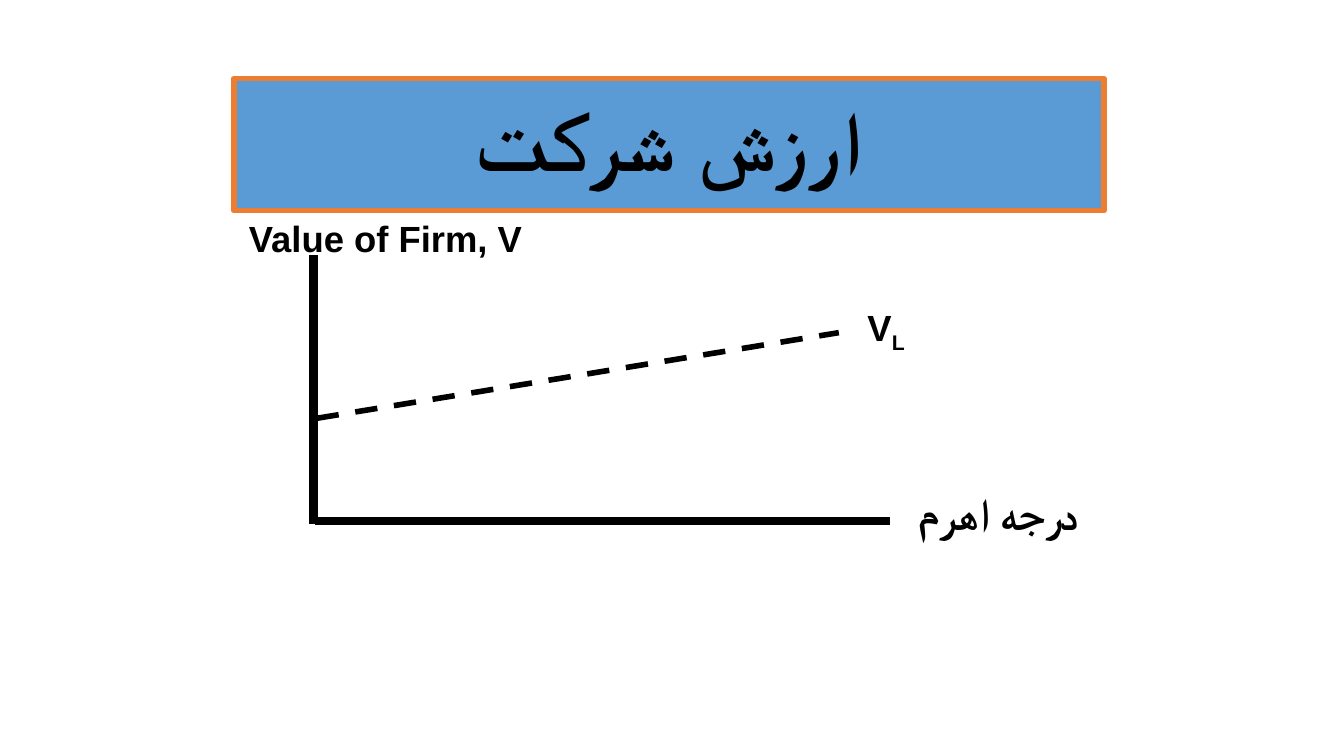
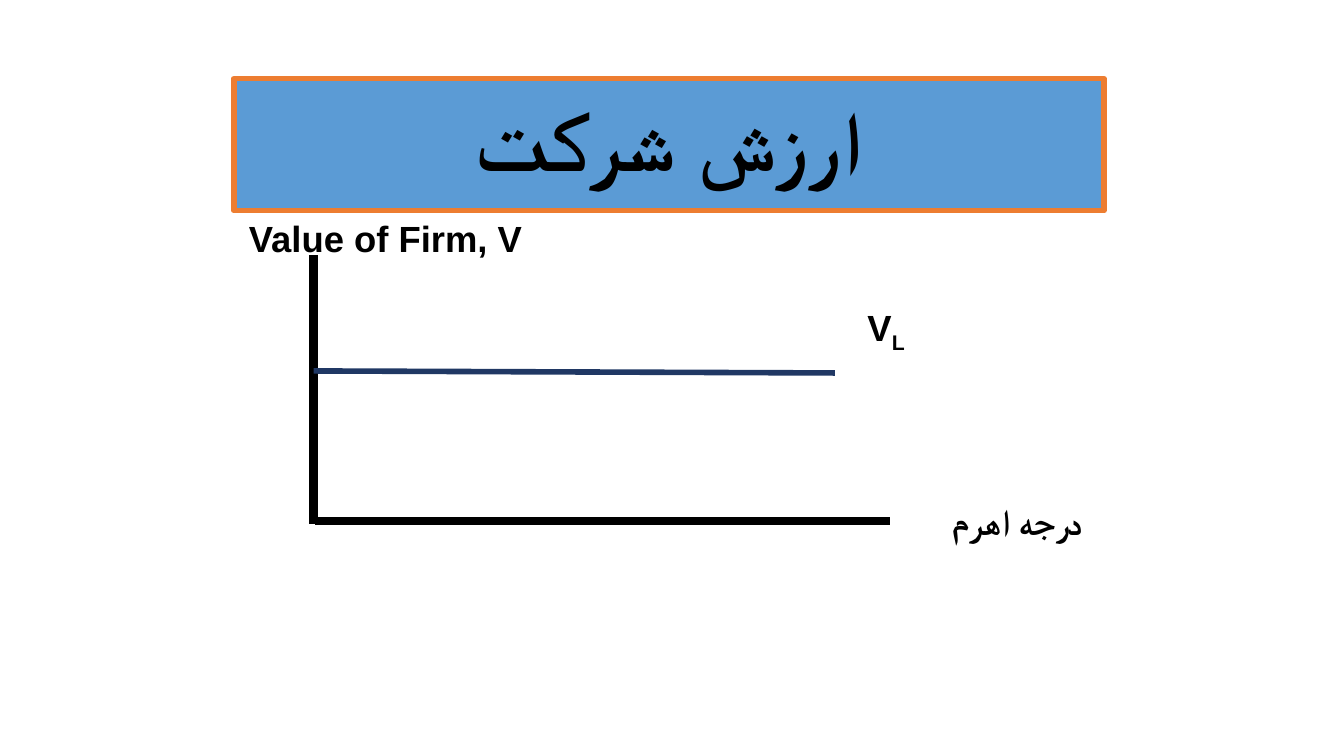
from dataclasses import dataclass

from lxml import etree
from pptx import Presentation
from pptx.dml.color import RGBColor
from pptx.enum.dml import MSO_LINE
from pptx.enum.shapes import MSO_CONNECTOR
from pptx.enum.text import MSO_ANCHOR, MSO_AUTO_SIZE, PP_ALIGN
from pptx.oxml.ns import qn
from pptx.util import Pt

PX = 9144  # 100 px to the inch
STRAIGHT = MSO_CONNECTOR.STRAIGHT
DASH = MSO_LINE.DASH
CENTER, RIGHT = PP_ALIGN.CENTER, PP_ALIGN.RIGHT
MIDDLE = MSO_ANCHOR.MIDDLE
FIXED, GROW = MSO_AUTO_SIZE.NONE, MSO_AUTO_SIZE.SHAPE_TO_FIT_TEXT
TITLE_ONLY = 5


@dataclass(frozen=True)
class Theme:
    ink: RGBColor = RGBColor(0x00, 0x00, 0x00)
    band: RGBColor = RGBColor(0x5B, 0x9B, 0xD5)
    band_edge: RGBColor = RGBColor(0xED, 0x7D, 0x31)
    navy: RGBColor = RGBColor(0x20, 0x38, 0x64)
    font: str = "Arial"
    title_size: int = 60
    large_size: int = 32
    label_size: int = 26
    axis_width: int = 6
    line_width: int = 4


THEME = Theme()
TITLE_BOX = (232, 78, 863, 131)
GRAPH_BOX = (311, 253, 572, 267)


def px(*lengths):
    return [length * PX for length in lengths]


def write(frame, text, size=THEME.label_size, align=CENTER, spacing=0.9, subscript=""):
    """Set one bold right-to-left paragraph, with an optional subscript."""
    paragraph = frame.paragraphs[0]
    paragraph.alignment = align
    paragraph.line_spacing = spacing
    paragraph._p.get_or_add_pPr().set("rtl", "1")
    for part, baseline in ((text, 0), (subscript, -25000)):
        if not part:
            continue
        run = paragraph.add_run()
        run.text = part
        run.font.size = Pt(size)
        run.font.bold = True
        run.font.name = THEME.font
        run.font.color.rgb = THEME.ink
        properties = run._r.get_or_add_rPr()
        etree.SubElement(properties, qn("a:cs")).set("typeface", THEME.font)
        if baseline:
            properties.set("baseline", str(baseline))


def add_label(slide, box, text, wrap=True, **text_format):
    frame = slide.shapes.add_textbox(*px(*box)).text_frame
    frame.word_wrap = wrap
    frame.auto_size = GROW
    write(frame, text, **text_format)


def add_line(slide, start, end, width, color=THEME.ink, dash=None):
    line = slide.shapes.add_connector(STRAIGHT, *px(*start, *end))
    line.line.width = Pt(width)
    line.line.color.rgb = color
    if dash is not None:
        line.line.dash_style = dash
    etree.SubElement(line._element.spPr, qn("a:effectLst"))


def fill_title(slide, box, text):
    title = slide.shapes.title
    title.left, title.top, title.width, title.height = px(*box)
    title.fill.solid()
    title.fill.fore_color.rgb = THEME.band
    title.line.color.rgb = THEME.band_edge
    title.line.width = Pt(THEME.line_width)
    frame = title.text_frame
    frame.word_wrap = True
    frame.auto_size = FIXED
    frame.vertical_anchor = MIDDLE
    write(frame, text, size=THEME.title_size)


def add_graph(slide, box, value_line, leverage_box, leverage_size, **line_format):
    """Draw axes, labels and the value line; inner places are offsets from the box."""
    left, top, width, height = box

    def place(x, y, *size):
        return (left + x, top + y, *size)

    add_line(slide, place(0, 0), place(0, height), THEME.axis_width)
    add_label(slide, place(-144, -39, 431, 49), "Value of Firm, V")
    add_label(slide, place(*leverage_box), "درجه اهرم", size=leverage_size)
    add_label(slide, place(537, 45, 59, 54), "V", wrap=False,
              align=RIGHT, spacing=1.0, subscript="L")
    start, end = value_line
    add_line(slide, place(*start), place(*end), THEME.line_width, **line_format)
    add_line(slide, place(1, height - 3), place(width, height - 3), THEME.axis_width)


def add_value_slide(deck, **graph):
    slide = deck.slides.add_slide(deck.slide_layouts[TITLE_ONLY])
    fill_title(slide, TITLE_BOX, "ارزش شرکت")
    add_graph(slide, GRAPH_BOX, **graph)


def main():
    deck = Presentation()
    deck.slide_width, deck.slide_height = px(1333, 750)
    add_value_slide(deck, value_line=((3, 162), (521, 77)), dash=DASH,
                    leverage_box=(538, 230, 281, 60), leverage_size=THEME.large_size)
    add_value_slide(deck, value_line=((0, 115), (517, 117)), color=THEME.navy,
                    leverage_box=(537, 242, 321, 49), leverage_size=THEME.label_size)
    deck.save("out.pptx")


if __name__ == "__main__":
    main()
